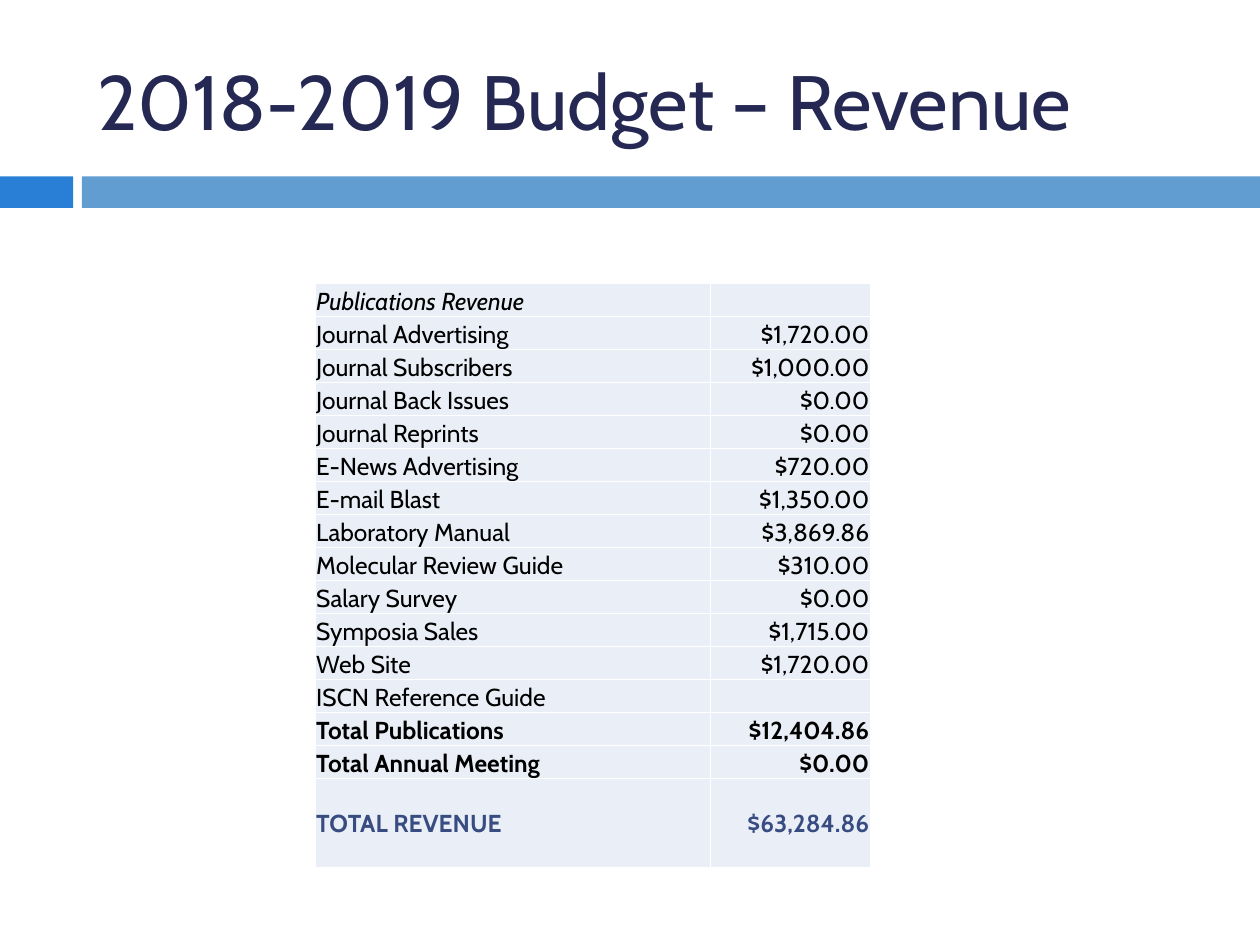
"""Build the 2018-2019 budget revenue slide."""
from lxml import etree
from pptx import Presentation
from pptx import util as u
from pptx.dml.color import RGBColor
from pptx.enum import shapes, text
from pptx.oxml.ns import qn

FONT = "Cabin"
TITLE = "2018-2019 Budget – Revenue"
BANDS = [(0, 0.58, "297FD5"), (0.65, 9.35, "629DD1")]
ROWS = [
    ("Publications Revenue", "", "italic"),
    ("Journal Advertising", "$1,720.00", "plain"),
    ("Journal Subscribers", "$1,000.00", "plain"),
    ("Journal Back Issues", "$0.00", "plain"),
    ("Journal Reprints", "$0.00", "plain"),
    ("E-News Advertising", "$720.00", "plain"),
    ("E-mail Blast", "$1,350.00", "plain"),
    ("Laboratory Manual", "$3,869.86", "plain"),
    ("Molecular Review Guide", "$310.00", "plain"),
    ("Salary Survey", "$0.00", "plain"),
    ("Symposia Sales", "$1,715.00", "plain"),
    ("Web Site", "$1,720.00", "plain"),
    ("ISCN Reference Guide", "", "plain"),
    ("Total Publications", "$12,404.86", "bold"),
    ("Total Annual Meeting", "$0.00", "bold"),
    ("TOTAL REVENUE", "$63,284.86", "total"),
]
COLUMNS = [3.14, 1.27]
TABLE_LEFT, TABLE_TOP, TABLE_HEIGHT, TOTAL_HEIGHT = 2.5, 2.25, 4.64, 0.71
ROW_HEIGHT = (TABLE_HEIGHT - TOTAL_HEIGHT) / (len(ROWS) - 1)


def color(value):
    return RGBColor.from_string(value)


def add_run(paragraph, words, size, shade):
    run = paragraph.add_run()
    run.text = words
    run.font.name, run.font.size = FONT, u.Pt(size)
    run.font.color.rgb = color(shade)
    return run


def add_borders(cell):
    properties = cell._tc.get_or_add_tcPr()
    for side in ("a:lnL", "a:lnR", "a:lnT", "a:lnB"):
        line = etree.SubElement(properties, qn(side), w=str(u.Pt(1)))
        fill = etree.SubElement(line, qn("a:solidFill"))
        etree.SubElement(fill, qn("a:srgbClr"), val="FFFFFF")


def fill_cell(cell, words, style, align):
    cell.margin_left = cell.margin_right = cell.margin_top = u.Inches(0.01)
    cell.margin_bottom = 0
    total = style == "total"
    cell.vertical_anchor = text.MSO_ANCHOR.MIDDLE if total else text.MSO_ANCHOR.BOTTOM
    add_borders(cell)
    cell.fill.solid()
    cell.fill.fore_color.rgb = color("EAEFF7")
    paragraph = cell.text_frame.paragraphs[0]
    paragraph.alignment = align
    if words:
        run = add_run(paragraph, words, 14, "384C81" if total else "000000")
        run.font.bold = style in ("bold", "total")
        run.font.italic = style == "italic"
    else:
        etree.SubElement(paragraph._p, qn("a:endParaRPr"), sz="1400")


def add_bands(slide):
    for left, width, shade in BANDS:
        band = slide.shapes.add_shape(
            shapes.MSO_SHAPE.RECTANGLE,
            u.Inches(left), u.Inches(1.4), u.Inches(width), u.Inches(0.25))
        band.shadow.inherit = False
        band.fill.solid()
        band.fill.fore_color.rgb = color(shade)
        band.line.fill.background()


def add_title(slide):
    title = slide.shapes.title
    title.left, title.top = u.Inches(0.67), u.Inches(0.25)
    title.width, title.height = u.Inches(8.92), u.Inches(1.08)
    title.text_frame.vertical_anchor = text.MSO_ANCHOR.MIDDLE
    paragraph = title.text_frame.paragraphs[0]
    paragraph.alignment = text.PP_ALIGN.LEFT
    add_run(paragraph, TITLE, 44, "242852")


def add_budget(slide):
    table = slide.shapes.add_table(
        len(ROWS), len(COLUMNS), u.Inches(TABLE_LEFT), u.Inches(TABLE_TOP),
        u.Inches(sum(COLUMNS)), u.Inches(TABLE_HEIGHT)).table
    table.first_row = table.horz_banding = False
    for column, width in zip(table.columns, COLUMNS):
        column.width = u.Inches(width)
    for row, (label, amount, style) in zip(table.rows, ROWS):
        row.height = u.Inches(TOTAL_HEIGHT if style == "total" else ROW_HEIGHT)
        fill_cell(row.cells[0], label, style, text.PP_ALIGN.LEFT)
        fill_cell(row.cells[1], amount, style, text.PP_ALIGN.RIGHT)


def main():
    presentation = Presentation()
    presentation.slide_width, presentation.slide_height = u.Inches(10), u.Inches(7.5)
    slide = presentation.slides.add_slide(presentation.slide_layouts[5])
    add_bands(slide)
    add_title(slide)
    add_budget(slide)
    presentation.save("out.pptx")


if __name__ == "__main__":
    main()
